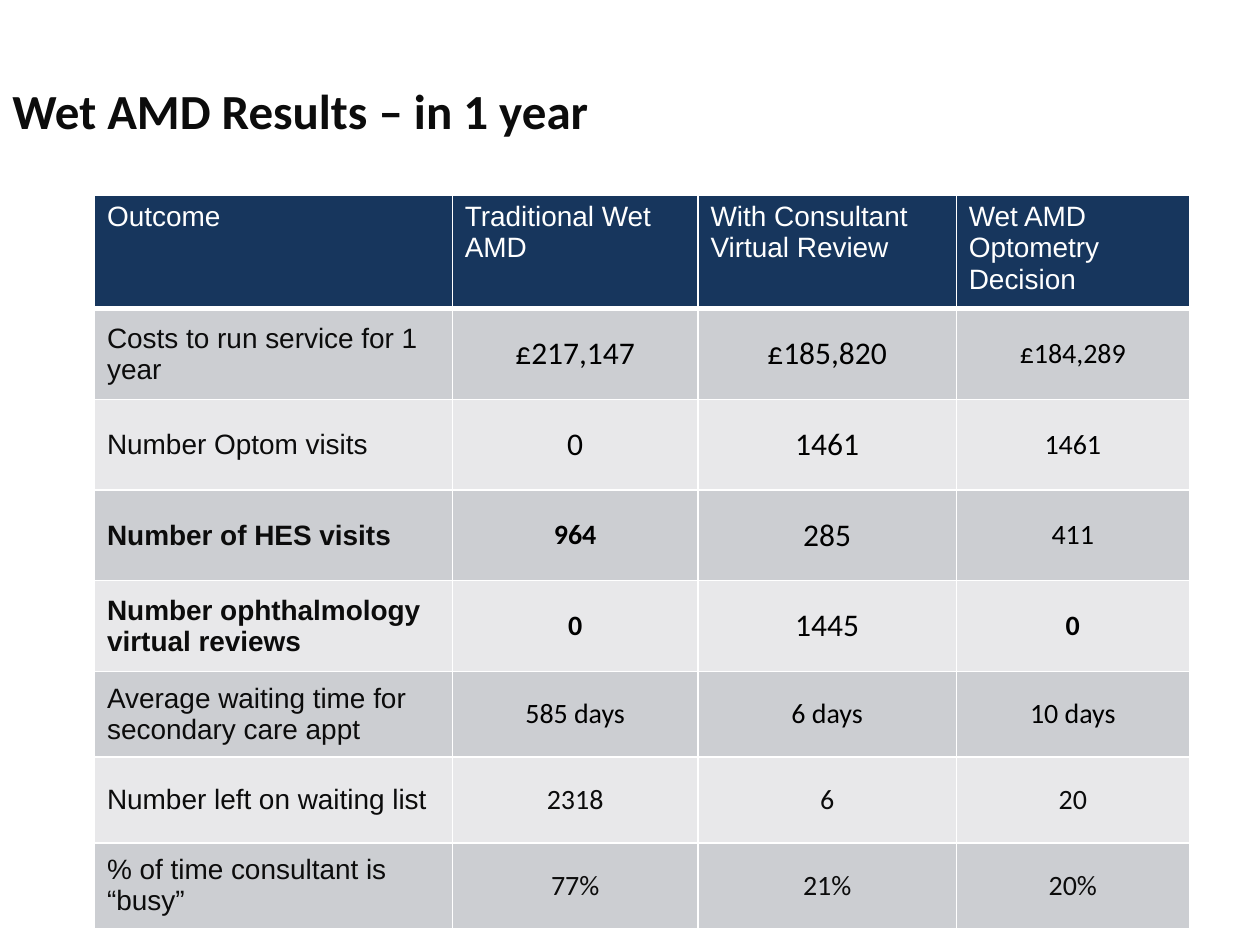
"""Build the slide of Wet AMD results over one year."""
from lxml.etree import SubElement
from pptx import Presentation
from pptx.dml.color import RGBColor
from pptx.enum.text import MSO_ANCHOR as Anchor, PP_ALIGN as Align
from pptx.oxml.ns import qn
from pptx.util import Inches, Pt

COLORS = {"header": "17365D", "odd": "CCCED2", "even": "E8E8EA",
          "white": "FFFFFF", "ink": "0C0C0C", "black": "000000"}
TITLE = "Wet AMD Results – in 1 year"
ROWS = [
    ("Outcome", "Traditional Wet AMD", "With Consultant Virtual Review", "Wet AMD Optometry Decision"),
    ("Costs to run service for 1 year", "£217,147", "£185,820", "£184,289"),
    ("Number Optom visits", "0", "1461", "1461"),
    ("Number of HES visits", "964", "285", "411"),
    ("Number ophthalmology virtual reviews", "0", "1445", "0"),
    ("Average waiting time for secondary care appt", "585 days", "6 days", "10 days"),
    ("Number left on waiting list", "2318", "6", "20"),
    ("% of time consultant is “busy”", "77%", "21%", "20%"),
]
LARGE = {(1, 1), (1, 2), (2, 1), (2, 2), (3, 2), (4, 2)}
BOLD = {(3, 0), (3, 1), (4, 0), (4, 1), (4, 3)}
COLUMN_WIDTHS = (2.84, 1.95, 2.05, 1.85)
ROW_HEIGHTS = (0.72,) * 5 + (0.68,) * 3
FIRST_INK_ROW = 6


def write(frame, text, *, font="Arial", size=16, color="ink", bold=False, align=Align.LEFT):
    para = frame.paragraphs[0]
    para.alignment = align
    span = para.add_run()
    span.text = text
    span.font.name, span.font.size, span.font.bold = font, Pt(size), bold
    span.font.color.rgb = RGBColor.from_string(COLORS[color])


def paint(cell, fill, bottom):
    properties = cell._tc.get_or_add_tcPr()
    for side, width in (("L", 1), ("R", 1), ("T", 1), ("B", bottom)):
        line = SubElement(properties, qn(f"a:ln{side}"), w=str(Pt(width)))
        solid = SubElement(line, qn("a:solidFill"))
        SubElement(solid, qn("a:srgbClr"), val=COLORS["white"])
    cell.fill.solid()
    cell.fill.fore_color.rgb = RGBColor.from_string(COLORS[fill])


def add_title(page):
    box = page.shapes.add_textbox(0, Inches(0.15), Inches(9.31), Inches(1.45))
    box.text_frame.word_wrap = True
    box.text_frame.vertical_anchor = Anchor.MIDDLE
    write(box.text_frame, TITLE, font="Calibri", size=28, bold=True)


def add_results(page):
    table = page.shapes.add_table(
        len(ROWS), len(COLUMN_WIDTHS), Inches(0.75), Inches(1.55),
        Inches(sum(COLUMN_WIDTHS)), Inches(sum(ROW_HEIGHTS))).table
    for column, width in zip(table.columns, COLUMN_WIDTHS):
        column.width = Inches(width)
    for row, height in zip(table.rows, ROW_HEIGHTS):
        row.height = Inches(height)
    for r, texts in enumerate(ROWS):
        for c, text in enumerate(texts):
            cell = table.cell(r, c)
            if r == 0:
                paint(cell, "header", bottom=3)
                write(cell.text_frame, text, color="white")
                continue
            paint(cell, "odd" if r % 2 else "even", bottom=1)
            cell.vertical_anchor = Anchor.MIDDLE
            style = {"bold": (r, c) in BOLD}
            if c:
                style.update(font="Calibri", align=Align.CENTER,
                             size=18 if (r, c) in LARGE else 16,
                             color="black" if r < FIRST_INK_ROW else "ink")
            write(cell.text_frame, text, **style)


def main():
    deck = Presentation()
    deck.slide_width, deck.slide_height = Inches(10), Inches(7.5)
    page = deck.slides.add_slide(deck.slide_layouts[6])
    add_title(page)
    add_results(page)
    deck.save("out.pptx")


if __name__ == "__main__":
    main()
